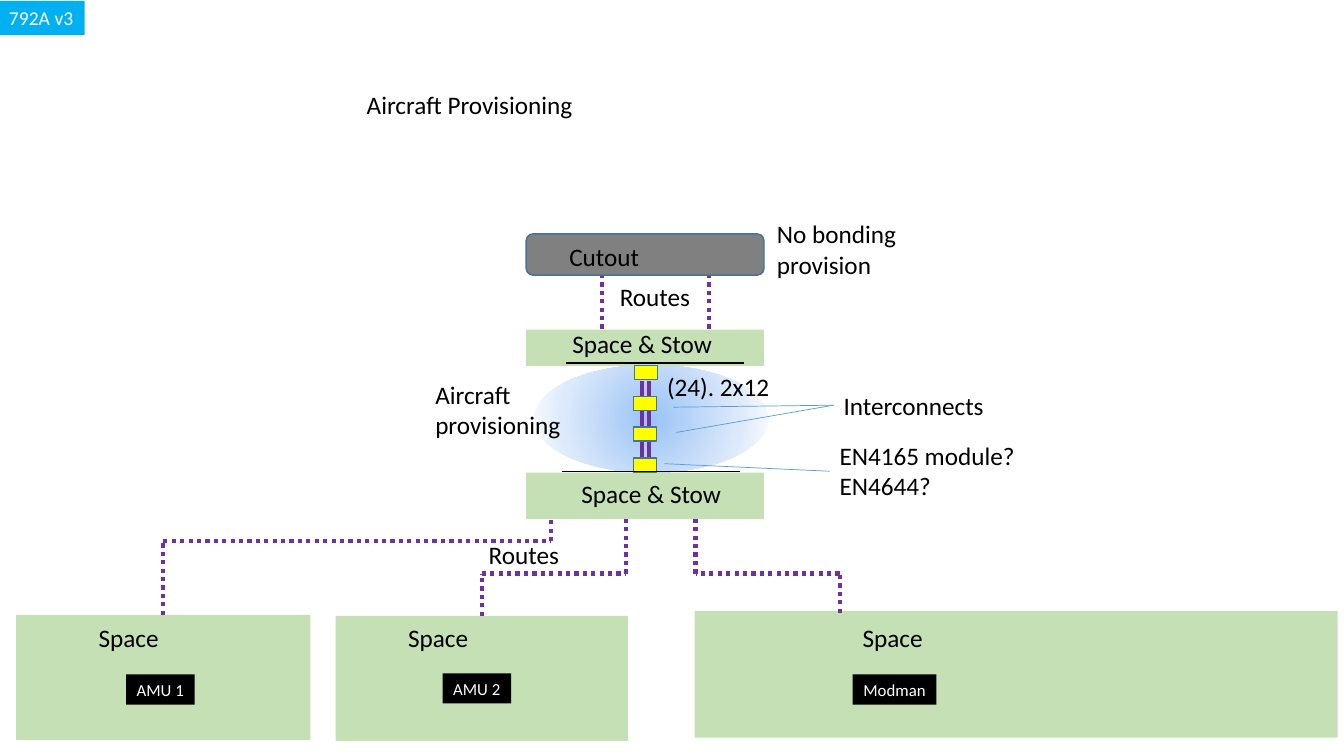
from dataclasses import dataclass
from itertools import pairwise
from typing import Optional

import pptx
import pptx.dml.color
import pptx.enum.dml
import pptx.enum.shapes
import pptx.enum.text
import pptx.oxml
import pptx.oxml.ns
import pptx.shapes.autoshape
import pptx.shapes.base
import pptx.shapes.connector
import pptx.util

COLUMNS, ROWS = 133.33, 75
CELL = pptx.util.Inches(0.1)
SHAPE = pptx.enum.shapes.MSO_SHAPE
TOP, LEFT = 0, 1


@dataclass(frozen=True)
class Theme:
    font: str = "Calibri"
    text: str = "000000"
    inverse: str = "FFFFFF"
    space: str = "C5E0B4"
    version: str = "00B0F0"
    cutout: str = "808080"
    plug: str = "FFFF00"
    outline: str = "43739E"
    cable: str = "7030A0"
    leader: str = "5B9BD5"
    glow: tuple = ((0, "9AC3F5"), (69, "DDEAFB"), (100, "FFFFFF"))
    body_size: float = 18
    version_size: float = 14
    tag_size: float = 12
    cable_width: float = 3
    outline_width: float = 1
    leader_width: float = 0.5


THEME = Theme()


@dataclass(frozen=True)
class Box:
    """A rectangle in grid columns and rows."""
    left: float
    top: float
    width: float
    height: float


@dataclass(frozen=True)
class Label:
    text: str
    box: Box
    wrap: bool = True


@dataclass(frozen=True)
class Route:
    """A dotted cable through (column, row) points, starting at a space if one is named."""
    points: tuple
    start: Optional[str] = None


@dataclass(frozen=True)
class Leader:
    column: float
    row: float
    target: str


GLOW = Box(53, 36.2, 23.2, 10.7)
CUTOUT = Box(52.2, 23.2, 23.6, 4.1)
VERSION = Label("792A v3", Box(-0.1, 0.1, 8.5, 3.4), False)
SPACES = {
    "Modman": Box(68.9, 60.6, 63.8, 12.6),
    "AMU 1": Box(1.6, 61, 29.2, 12.4),
    "AMU 2": Box(33.3, 61.1, 29, 12.4),
    "Lower stow": Box(52.2, 46.9, 23.6, 4.6),
    "Upper stow": Box(52.2, 32.7, 23.6, 3.6),
}
TAGS = (
    Label("AMU 1", Box(12.5, 66.9, 6.8, 3), False),
    Label("AMU 2", Box(43.9, 66.8, 6.8, 3), False),
    Label("Modman", Box(84.6, 66.9, 8.3, 3), False),
)
WIRE_COLUMNS = (63.7, 64.4)
WIRE_ROWS = (46.9, 37.8)
PLUGS = tuple(Box(left, top, 1.4, 2.3) for left, top in
              ((63.3, 45), (63.4, 35.8), (63.3, 38.9), (63.3, 41.9)))
ROUTES = (
    Route(((59.7, 32.6), (59.7, 27.3))),
    Route(((70.3, 32.6), (70.3, 27.3))),
    Route(((16.2, 61), (16.2, 53.7), (54.7, 53.7), (54.7, 51.5)), "AMU 1"),
    Route(((47.8, 61.1), (47.8, 56.9), (62.1, 56.9), (62.1, 51.5)), "AMU 2"),
    Route(((83.3, 60.8), (83.3, 56.9), (69, 56.9), (69, 51.5))),
)
SHELVES = ((56.2, 36), (55.8, 46.8))
SHELF_LENGTH = 17.6
LABELS = (
    Label("Aircraft Provisioning", Box(35.4, 8.4, 28.6, 4)),
    Label("No bonding\nprovision", Box(76.1, 21.2, 14, 7.1), False),
    Label("Cutout", Box(55.5, 23.4, 16.3, 4)),
    Label("Routes", Box(60.5, 27.4, 9.1, 4), False),
    Label("Space & Stow", Box(55.8, 32.1, 16.3, 4)),
    Label("(24). 2x12", Box(65.2, 36.3, 12.3, 4), False),
    Label("Aircraft provisioning", Box(42.2, 37.1, 16.3, 7.1)),
    Label("Interconnects", Box(82.7, 38.2, 22.1, 4)),
    Label("EN4165 module? EN4644?", Box(82.3, 43.2, 22.1, 7.1)),
    Label("Space & Stow", Box(56.7, 47, 16.3, 4)),
    Label("Routes", Box(47.5, 53, 9.1, 4), False),
) + tuple(Label("Space", Box(left, 61.2, 16.3, 4)) for left in (8.8, 39.5, 84.6))
LEADERS = (
    Leader(67.1, 42.9, "Interconnects"),
    Leader(66.8, 40.4, "Interconnects"),
    Leader(65.9, 46, "EN4165 module? EN4644?"),
)


def cells(*counts: float) -> list[int]:
    return [round(count * CELL) for count in counts]


def rgb(colour: str) -> pptx.dml.color.RGBColor:
    return pptx.dml.color.RGBColor.from_string(colour)


def add_box(slide: pptx.slide.Slide, box: Box, colour: str, outline: Optional[str] = None,
            kind: SHAPE = SHAPE.RECTANGLE) -> pptx.shapes.autoshape.Shape:
    shape = slide.shapes.add_shape(kind, *cells(box.left, box.top, box.width, box.height))
    shape.shadow.inherit = False
    shape.fill.solid()
    shape.fill.fore_color.rgb = rgb(colour)
    if outline:
        shape.line.color.rgb = rgb(outline)
        shape.line.width = pptx.util.Pt(THEME.outline_width)
    else:
        shape.line.fill.background()
    return shape


def add_glow(slide: pptx.slide.Slide) -> None:
    shape = add_box(slide, GLOW, THEME.inverse, kind=SHAPE.OVAL)
    stops = "".join(f'<a:gs pos="{share * 1000}"><a:srgbClr val="{colour}"/></a:gs>'
                    for share, colour in THEME.glow)
    gradient = pptx.oxml.parse_xml(
        f'<a:gradFill {pptx.oxml.ns.nsdecls("a")}><a:gsLst>{stops}</a:gsLst><a:path path="circle">'
        '<a:fillToRect l="50000" t="50000" r="50000" b="50000"/></a:path></a:gradFill>')
    properties = shape._element.spPr
    properties.replace(properties.find(pptx.oxml.ns.qn("a:solidFill")), gradient)


def write(shape: pptx.shapes.autoshape.Shape, label: Label, size: float, colour: str,
          align: pptx.enum.text.PP_ALIGN = pptx.enum.text.PP_ALIGN.LEFT,
          anchor: pptx.enum.text.MSO_ANCHOR = pptx.enum.text.MSO_ANCHOR.TOP) -> None:
    frame = shape.text_frame
    frame.text = label.text
    frame.word_wrap = label.wrap
    frame.auto_size = pptx.enum.text.MSO_AUTO_SIZE.SHAPE_TO_FIT_TEXT
    frame.vertical_anchor = anchor
    for paragraph in frame.paragraphs:
        paragraph.alignment = align
        for run in paragraph.runs:
            run.font.name = THEME.font
            run.font.size = pptx.util.Pt(size)
            run.font.color.rgb = rgb(colour)


def add_line(slide: pptx.slide.Slide, start: tuple, end: tuple, colour: str, width: float,
             dotted: bool = False) -> pptx.shapes.connector.Connector:
    connector = slide.shapes.add_connector(
        pptx.enum.shapes.MSO_CONNECTOR.STRAIGHT, *cells(*start, *end))
    connector.line.color.rgb = rgb(colour)
    connector.line.width = pptx.util.Pt(width)
    if dotted:
        connector.line.dash_style = pptx.enum.dml.MSO_LINE.ROUND_DOT
    connector._element.spPr.append(
        pptx.oxml.parse_xml(f'<a:effectLst {pptx.oxml.ns.nsdecls("a")}/>'))
    return connector


def add_route(slide: pptx.slide.Slide, route: Route,
              spaces: dict[str, pptx.shapes.base.BaseShape]) -> None:
    lines = [add_line(slide, start, end, THEME.cable, THEME.cable_width, dotted=True)
             for start, end in pairwise(route.points)]
    if route.start:
        lines[0].begin_connect(spaces[route.start], TOP)


def add_label(slide: pptx.slide.Slide, label: Label) -> pptx.shapes.autoshape.Shape:
    box = label.box
    shape = slide.shapes.add_textbox(*cells(box.left, box.top, box.width, box.height))
    write(shape, label, THEME.body_size, THEME.text)
    return shape


def main() -> None:
    presentation = pptx.Presentation()
    presentation.slide_width, presentation.slide_height = cells(COLUMNS, ROWS)
    slide = presentation.slides.add_slide(presentation.slide_layouts[6])

    add_glow(slide)
    for column in WIRE_COLUMNS:
        add_line(slide, (column, WIRE_ROWS[0]), (column, WIRE_ROWS[1]),
                 THEME.cable, THEME.cable_width)
    spaces = {name: add_box(slide, box, THEME.space) for name, box in SPACES.items()}
    for tag in TAGS:
        write(add_box(slide, tag.box, THEME.text), tag, THEME.tag_size, THEME.inverse,
              align=pptx.enum.text.PP_ALIGN.CENTER)
    write(add_box(slide, VERSION.box, THEME.version), VERSION, THEME.version_size,
          THEME.inverse, anchor=pptx.enum.text.MSO_ANCHOR.MIDDLE)
    for route in ROUTES:
        add_route(slide, route, spaces)
    add_box(slide, CUTOUT, THEME.cutout, THEME.outline, SHAPE.ROUNDED_RECTANGLE)
    for plug in PLUGS:
        add_box(slide, plug, THEME.plug, THEME.outline).rotation = 90
    for column, row in SHELVES:
        add_line(slide, (column, row), (column + SHELF_LENGTH, row),
                 THEME.text, THEME.outline_width)
    labels = {label.text: add_label(slide, label) for label in LABELS}
    for leader in LEADERS:
        start = (leader.column, leader.row)
        line = add_line(slide, start, start, THEME.leader, THEME.leader_width)
        line.end_connect(labels[leader.target], LEFT)
    presentation.save("out.pptx")


if __name__ == "__main__":
    main()
